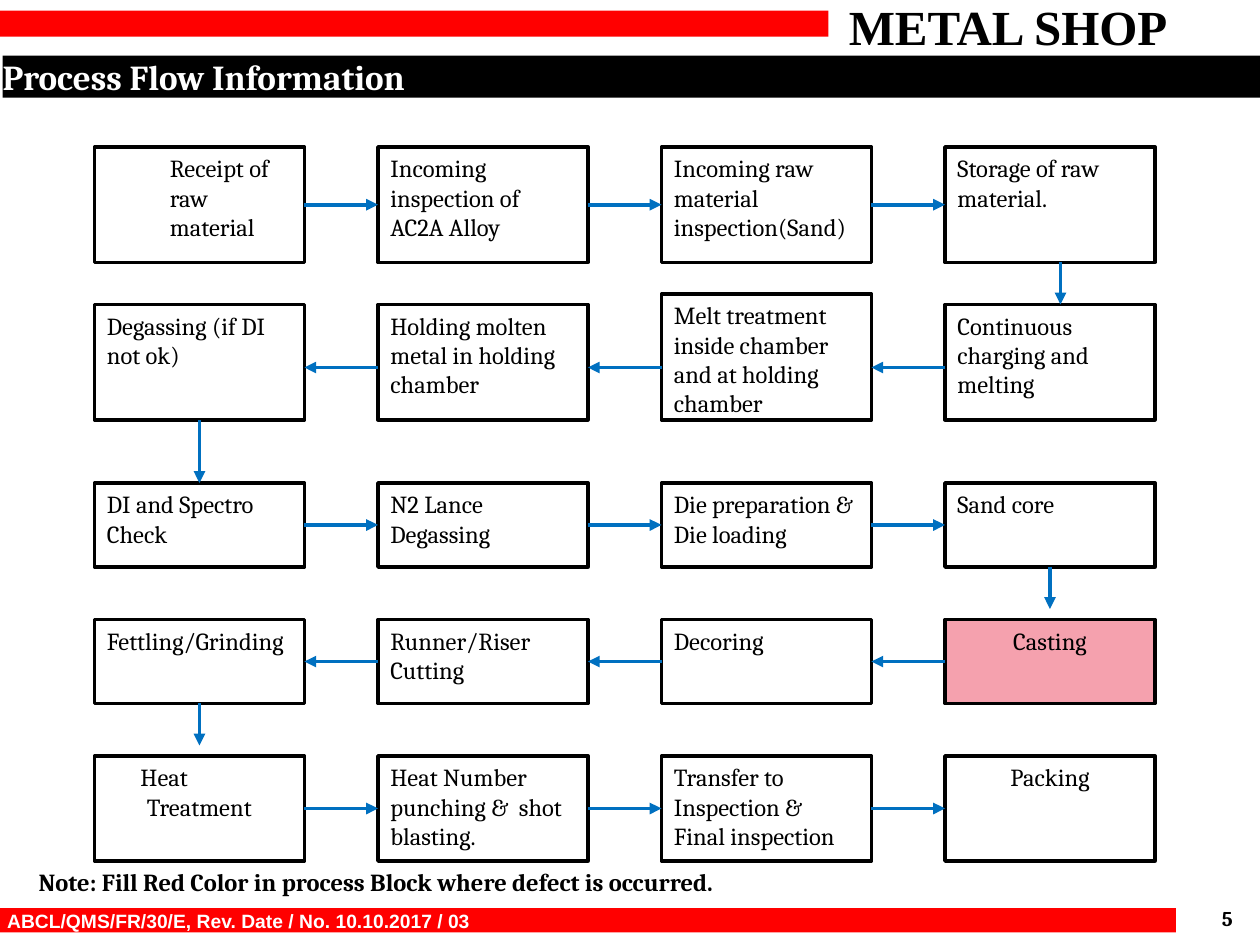
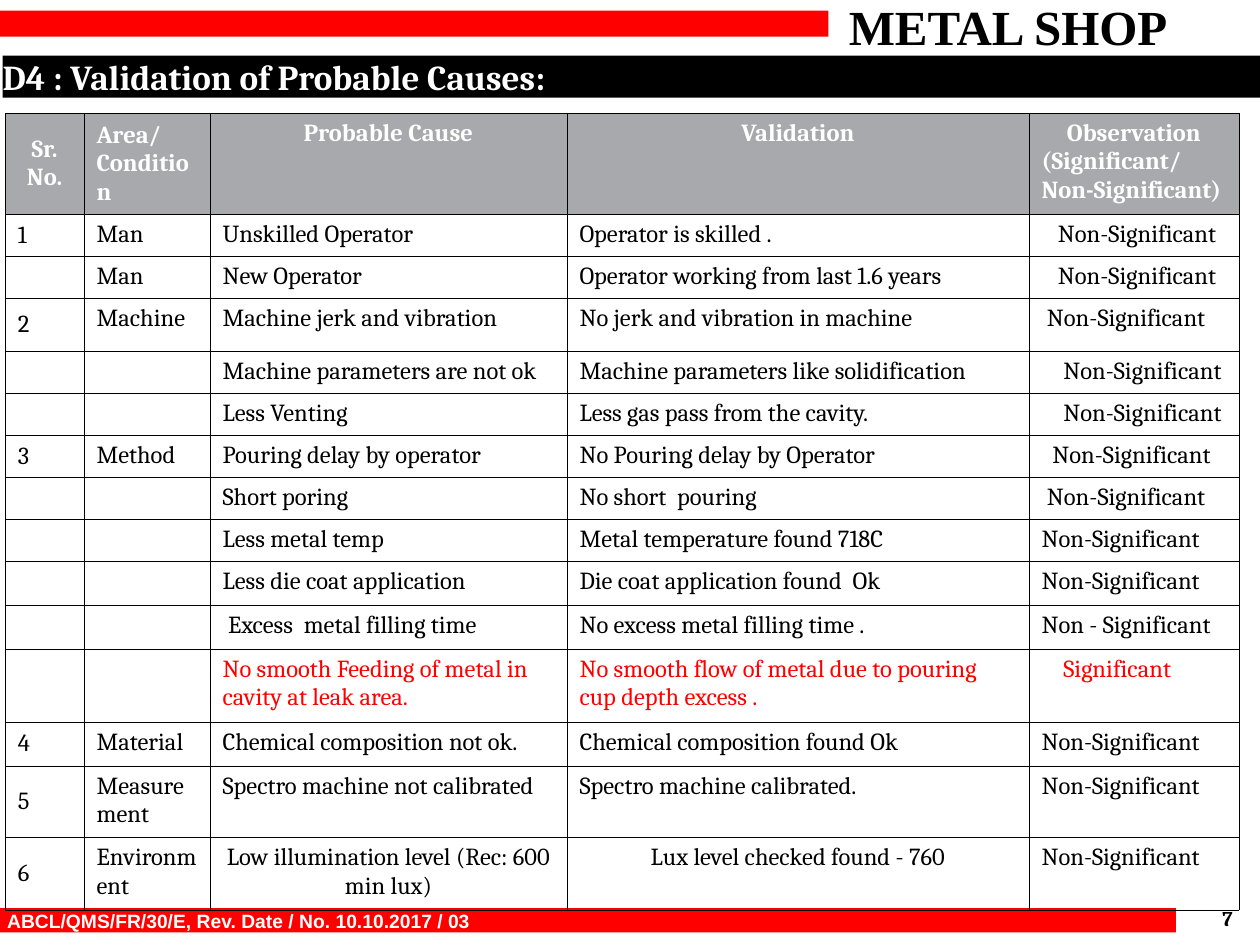
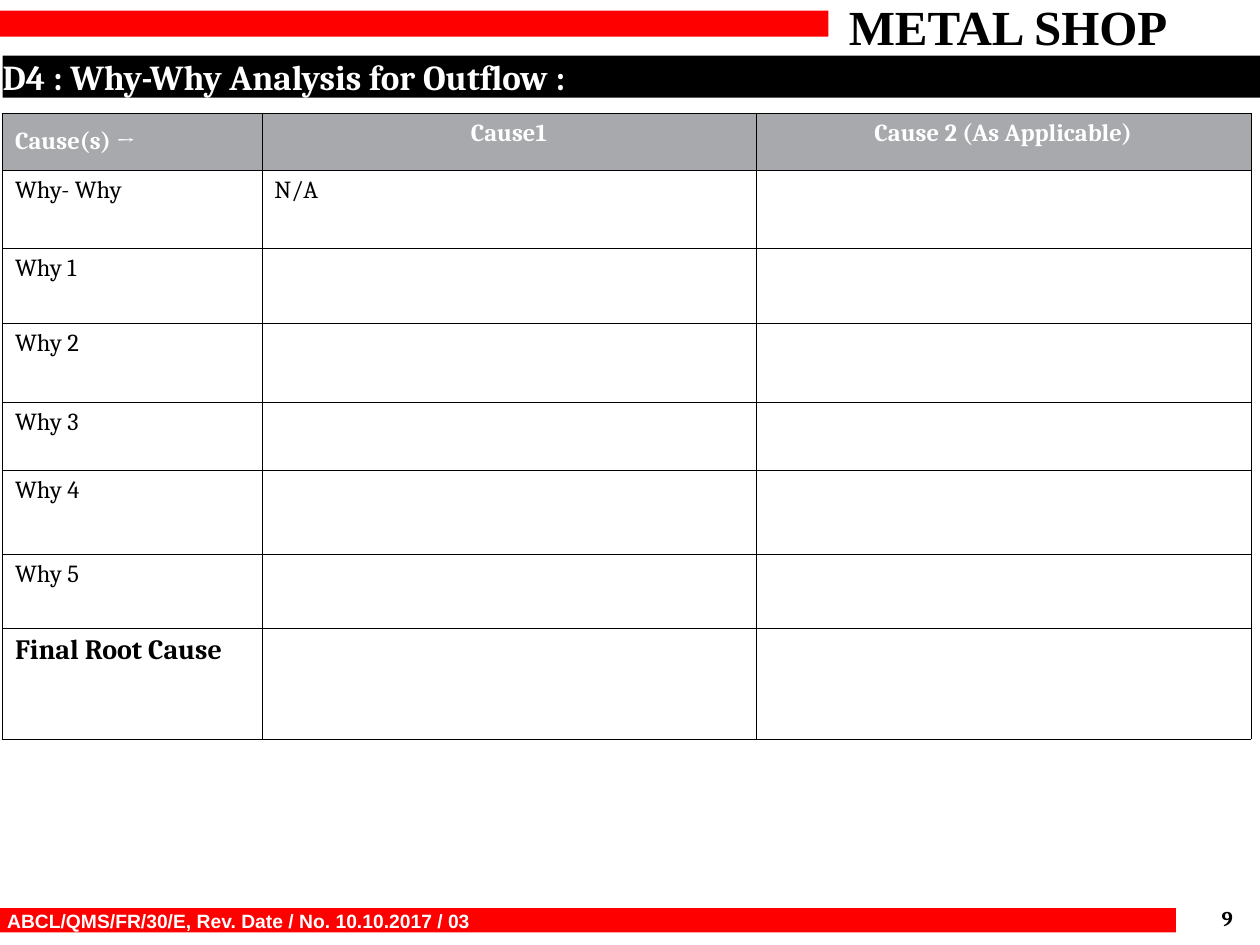
from dataclasses import dataclass
from typing import NamedTuple, Optional

from pptx import Presentation
from pptx.dml.color import RGBColor
from pptx.enum.shapes import MSO_CONNECTOR, MSO_SHAPE
from pptx.enum.text import MSO_ANCHOR, PP_ALIGN
from pptx.oxml import parse_xml
from pptx.oxml.ns import nsdecls, qn
from pptx.oxml.xmlchemy import OxmlElement
from pptx.util import Emu, Inches, Pt

BLACK = RGBColor(0x00, 0x00, 0x00)
WHITE = RGBColor(0xFF, 0xFF, 0xFF)
RED = RGBColor(0xFF, 0x00, 0x00)
GRAY = RGBColor(0xA7, 0xA9, 0xAC)
PINK = RGBColor(0xF5, 0xA1, 0xAE)
BLUE = RGBColor(0x00, 0x70, 0xC0)

SLIDE_WIDTH = Inches(10)
SLIDE_HEIGHT = Inches(7.5)
GRID_COLUMNS = 120
UNIT = SLIDE_WIDTH // GRID_COLUMNS
SPACE_WIDTH = 0.52

BRAND = "METAL SHOP"
FORM_REFERENCE = "ABCL/QMS/FR/30/E, Rev. Date / No. 10.10.2017 / 03"
TABLE_TOP = 10.8


def grid(units: float) -> Emu:
    return Emu(round(units * UNIT))


class Area(NamedTuple):
    left: float
    top: float
    width: float
    height: float

    def lengths(self) -> list[Emu]:
        return [grid(units) for units in self]


class TextStyle(NamedTuple):
    size: float = 14
    color: RGBColor = BLACK
    bold: bool = False
    font: str = "Cambria"
    align: PP_ALIGN = PP_ALIGN.LEFT
    indent: float = 0
    first_line: float = 0


BODY = TextStyle()
HEADER = TextStyle(color=WHITE, bold=True)
CENTERED_HEADER = HEADER._replace(align=PP_ALIGN.CENTER)
TITLE = TextStyle(20, WHITE, True)
BRAND_STYLE = TextStyle(28, BLACK, True, "Times New Roman", PP_ALIGN.CENTER)
FOOTER = TextStyle(11, WHITE, True, "Arial")
PAGE_NUMBER = TextStyle(12, BLACK, True, align=PP_ALIGN.RIGHT)
NOTE = TextStyle(bold=True)


@dataclass(frozen=True)
class Step:
    text: str
    fill: Optional[RGBColor] = WHITE
    style: TextStyle = BODY
    rise: float = 0


@dataclass(frozen=True)
class Stage:
    top: float
    height: float
    arrow_row: float
    steps: tuple[Step, ...]


class Drop(NamedTuple):
    column: float
    start: float
    end: float


@dataclass(frozen=True)
class Cell:
    text: str = ""
    style: TextStyle = BODY
    middle: bool = False
    lead_align: Optional[PP_ALIGN] = None
    fill: Optional[RGBColor] = None


@dataclass(frozen=True)
class Cause:
    number: str
    area: str
    cause: str
    validation: str
    verdict: str = "Non-Significant"
    verdict_spaces: int = 0
    height: float = 4
    cause_spaces: int = 0
    color: RGBColor = BLACK
    align: PP_ALIGN = PP_ALIGN.LEFT

    def cells(self) -> list[Cell]:
        finding = BODY._replace(color=self.color, align=self.align)
        verdict = BODY._replace(color=self.color, indent=self.verdict_spaces * SPACE_WIDTH)
        return [
            Cell(self.number, middle=True),
            Cell(self.area),
            Cell(self.cause, finding._replace(indent=self.cause_spaces * SPACE_WIDTH)),
            Cell(self.validation, finding),
            Cell(self.verdict, verdict),
        ]


CENTERED = TextStyle(align=PP_ALIGN.CENTER)
FLOW_LEFT, STEP_WIDTH, STEP_PITCH = 9, 20, 27

STAGES = (
    Stage(14, 11, 19.5, (
        Step("Receipt of raw material", None, TextStyle(indent=6)),
        Step("Incoming inspection of\nAC2A Alloy", None),
        Step("Incoming raw material inspection(Sand)", None),
        Step("Storage of raw material.", None),
    )),
    Stage(29, 11, 35, (
        Step("Degassing (if DI not ok)"),
        Step("Holding molten metal in holding chamber"),
        Step("Melt treatment inside chamber and at holding chamber", rise=1),
        Step("Continuous charging and melting"),
    )),
    Stage(46, 8, 50, (
        Step("DI and Spectro Check"),
        Step("N2 Lance Degassing"),
        Step("Die preparation & Die loading", None),
        Step("Sand core", None),
    )),
    Stage(59, 8, 63, (
        Step("Fettling/Grinding"),
        Step("Runner/Riser Cutting"),
        Step("Decoring"),
        Step("Casting", PINK, CENTERED),
    )),
    Stage(72, 10, 77, (
        Step("Heat\vTreatment", style=TextStyle(indent=3.8, first_line=-0.6)),
        Step("Heat Number punching &  shot blasting."),
        Step("Transfer to Inspection &\vFinal inspection"),
        Step("Packing", None, CENTERED),
    )),
)
DROPS = (Drop(101, 25, 29), Drop(19, 40, 46), Drop(100, 54, 58), Drop(19, 67, 71))

CAUSE_COLUMNS = (7.5, 12, 34, 44, 20)
CAUSE_HEADER_HEIGHT = 9.6
CAUSE_HEADER = [
    Cell("Sr. No.", CENTERED_HEADER, True, fill=GRAY),
    Cell("Area/Condition", HEADER, True, fill=GRAY),
    Cell("Probable Cause", CENTERED_HEADER, fill=GRAY),
    Cell("Validation", CENTERED_HEADER, fill=GRAY),
    Cell("Observation\n(Significant/\nNon-Significant)", HEADER,
         lead_align=PP_ALIGN.CENTER, fill=GRAY),
]
CAUSES = (
    Cause("1", "Man", "Unskilled Operator", "Operator is skilled .", verdict_spaces=3),
    Cause("", "Man", "New Operator", "Operator working from last 1.6 years", verdict_spaces=3),
    Cause("2", "Machine", "Machine jerk and vibration", "No jerk and vibration in machine",
          verdict_spaces=1, height=5),
    Cause("", "", "Machine parameters are not ok", "Machine parameters like solidification",
          verdict_spaces=4),
    Cause("", "", "Less Venting", "Less gas pass from the cavity.", verdict_spaces=4),
    Cause("3", "Method", "Pouring delay by operator", "No Pouring delay by Operator",
          verdict_spaces=2),
    Cause("", "", "Short poring", "No short  pouring", verdict_spaces=1),
    Cause("", "", "Less metal temp", "Metal temperature found 718C"),
    Cause("", "", "Less die coat application", "Die coat application found  Ok", height=4.2),
    Cause("", "", "Excess  metal filling time", "No excess metal filling time .",
          "Non - Significant", height=4.2, cause_spaces=1),
    Cause("", "", "No smooth Feeding of metal in cavity at leak area.",
          "No smooth flow of metal due to pouring cup depth excess .",
          "Significant", 4, 6.9, color=RED),
    Cause("4", "Material", "Chemical composition not ok.", "Chemical composition found Ok",
          height=4.2),
    Cause("5", "Measurement", "Spectro machine not calibrated", "Spectro machine calibrated.",
          height=6.8),
    Cause("6", "Environment", "Low illumination level (Rec: 600 min lux)",
          "Lux level checked found - 760", height=6.9, align=PP_ALIGN.CENTER),
)

WHY_COLUMNS = (24.7, 47.05, 47.15)
WHY_HEIGHTS = (5.4, 7.4, 7.2, 7.5, 6.5, 8, 7, 10.6)
WHY_ROWS = [
    [
        Cell("Cause(s) →", HEADER, True, fill=GRAY),
        Cell("Cause1", CENTERED_HEADER, fill=GRAY),
        Cell("Cause 2 (As Applicable)", CENTERED_HEADER, fill=GRAY),
    ],
    [Cell("Why- Why"), Cell("N/A"), Cell()],
    *([Cell(f"Why {level}"), Cell(), Cell()] for level in range(1, 6)),
    [Cell("Final Root Cause", TextStyle(16, bold=True)), Cell(), Cell()],
]


def write(frame, text: str, style: TextStyle) -> None:
    frame.text = text
    for paragraph in frame.paragraphs:
        paragraph.alignment = style.align
        if style.indent:
            properties = paragraph._p.get_or_add_pPr()
            properties.set("marL", str(grid(style.indent)))
            properties.set("indent", str(grid(style.first_line)))
        for run in paragraph.runs:
            run.font.size = Pt(style.size)
            run.font.name = style.font
            run.font.bold = style.bold
            run.font.color.rgb = style.color
        if not paragraph.runs:
            ending = OxmlElement("a:endParaRPr")
            ending.set("sz", str(round(style.size * 100)))
            paragraph._p.append(ending)


def paint(fill, color: Optional[RGBColor]) -> None:
    if color is None:
        fill.background()
    else:
        fill.solid()
        fill.fore_color.rgb = color


def add_box(slide, area: Area, fill: Optional[RGBColor], outlined: bool = False):
    box = slide.shapes.add_shape(MSO_SHAPE.RECTANGLE, *area.lengths())
    box.shadow.inherit = False
    paint(box.fill, fill)
    if outlined:
        box.line.color.rgb = BLACK
        box.line.width = Pt(2)
    else:
        box.line.fill.background()
    return box


def add_label(slide, area: Area, text: str, style: TextStyle, inset: bool = True) -> None:
    frame = slide.shapes.add_textbox(*area.lengths()).text_frame
    set_frame(frame, inset)
    write(frame, text, style)


def set_frame(frame, inset: bool, anchor: MSO_ANCHOR = MSO_ANCHOR.MIDDLE) -> None:
    frame.word_wrap = True
    frame.vertical_anchor = anchor
    if not inset:
        frame.margin_left = frame.margin_right = frame.margin_top = frame.margin_bottom = 0


def add_arrow(slide, start: tuple[float, float], end: tuple[float, float]) -> None:
    arrow = slide.shapes.add_connector(
        MSO_CONNECTOR.STRAIGHT, *(grid(units) for units in (*start, *end)))
    arrow.line.color.rgb = BLUE
    arrow.line.width = Pt(2.25)
    properties = arrow._element.spPr
    properties.find(qn("a:ln")).append(parse_xml(f'<a:tailEnd {nsdecls("a")} type="triangle"/>'))
    properties.append(OxmlElement("a:effectLst"))


def add_borders(cell) -> None:
    properties = cell._tc.get_or_add_tcPr()
    for position, side in enumerate(("lnL", "lnR", "lnT", "lnB")):
        properties.insert(position, parse_xml(
            f'<a:{side} {nsdecls("a")} w="{Pt(0.25)}"><a:solidFill>'
            f'<a:srgbClr val="{BLACK}"/></a:solidFill></a:{side}>'))


def add_grid_table(slide, left: float, columns: tuple[float, ...],
                   heights: tuple[float, ...], rows: list[list[Cell]]) -> None:
    area = Area(left, TABLE_TOP, sum(columns), sum(heights))
    table = slide.shapes.add_table(len(rows), len(columns), *area.lengths()).table
    table.first_row = table.horz_banding = False
    for column, width in zip(table.columns, columns):
        column.width = grid(width)
    for row, height, contents in zip(table.rows, heights, rows):
        row.height = grid(height)
        for cell, content in zip(row.cells, contents):
            write(cell.text_frame, content.text, content.style)
            if content.lead_align is not None:
                cell.text_frame.paragraphs[0].alignment = content.lead_align
            cell.vertical_anchor = MSO_ANCHOR.MIDDLE if content.middle else MSO_ANCHOR.TOP
            paint(cell.fill, content.fill)
            add_borders(cell)


def add_page(deck, title: str, number: int):
    slide = deck.slides.add_slide(deck.slide_layouts[6])
    add_label(slide, Area(76, -1, 40, 7), BRAND, BRAND_STYLE)
    add_box(slide, Area(-0.1, 1, 79, 2.5), RED)
    add_box(slide, Area(0, 86.5, 112, 2.3), RED)
    add_label(slide, Area(-0.5, 85.9, 108, 3.5), FORM_REFERENCE, FOOTER)
    add_label(slide, Area(110.9, 86.2, 6.5, 2.4), str(number), PAGE_NUMBER, inset=False)
    band = add_box(slide, Area(0.24, 5.3, 119.76, 4), BLACK)
    set_frame(band.text_frame, inset=False)
    write(band.text_frame, title, TITLE)
    return slide


def add_stage(slide, stage: Stage, forward: bool) -> None:
    for position, step in enumerate(stage.steps):
        left = FLOW_LEFT + position * STEP_PITCH
        area = Area(left, stage.top - step.rise, STEP_WIDTH, stage.height + step.rise)
        box = add_box(slide, area, step.fill, outlined=True)
        set_frame(box.text_frame, inset=True, anchor=MSO_ANCHOR.TOP)
        write(box.text_frame, step.text, step.style)
        if position:
            ends = (left - STEP_PITCH + STEP_WIDTH, stage.arrow_row), (left, stage.arrow_row)
            add_arrow(slide, *(ends if forward else ends[::-1]))


def add_process_flow(deck) -> None:
    slide = add_page(deck, "Process Flow Information", 5)
    for position, stage in enumerate(STAGES):
        add_stage(slide, stage, forward=position % 2 == 0)
    for drop in DROPS:
        add_arrow(slide, (drop.column, drop.start), (drop.column, drop.end))
    add_label(slide, Area(2.5, 82, 114, 4),
              "Note: Fill Red Color in process Block where defect is occurred.", NOTE)


def add_validation(deck) -> None:
    slide = add_page(deck, "D4 : Validation of Probable Causes:", 7)
    heights = (CAUSE_HEADER_HEIGHT, *(cause.height for cause in CAUSES))
    rows = [CAUSE_HEADER, *(cause.cells() for cause in CAUSES)]
    add_grid_table(slide, 0.5, CAUSE_COLUMNS, heights, rows)


def add_why_analysis(deck) -> None:
    slide = add_page(deck, "D4 : Why-Why Analysis for Outflow :", 9)
    add_grid_table(slide, 0.24, WHY_COLUMNS, WHY_HEIGHTS, WHY_ROWS)


def main() -> None:
    deck = Presentation()
    deck.slide_width = SLIDE_WIDTH
    deck.slide_height = SLIDE_HEIGHT
    add_process_flow(deck)
    add_validation(deck)
    add_why_analysis(deck)
    deck.save("out.pptx")


if __name__ == "__main__":
    main()
